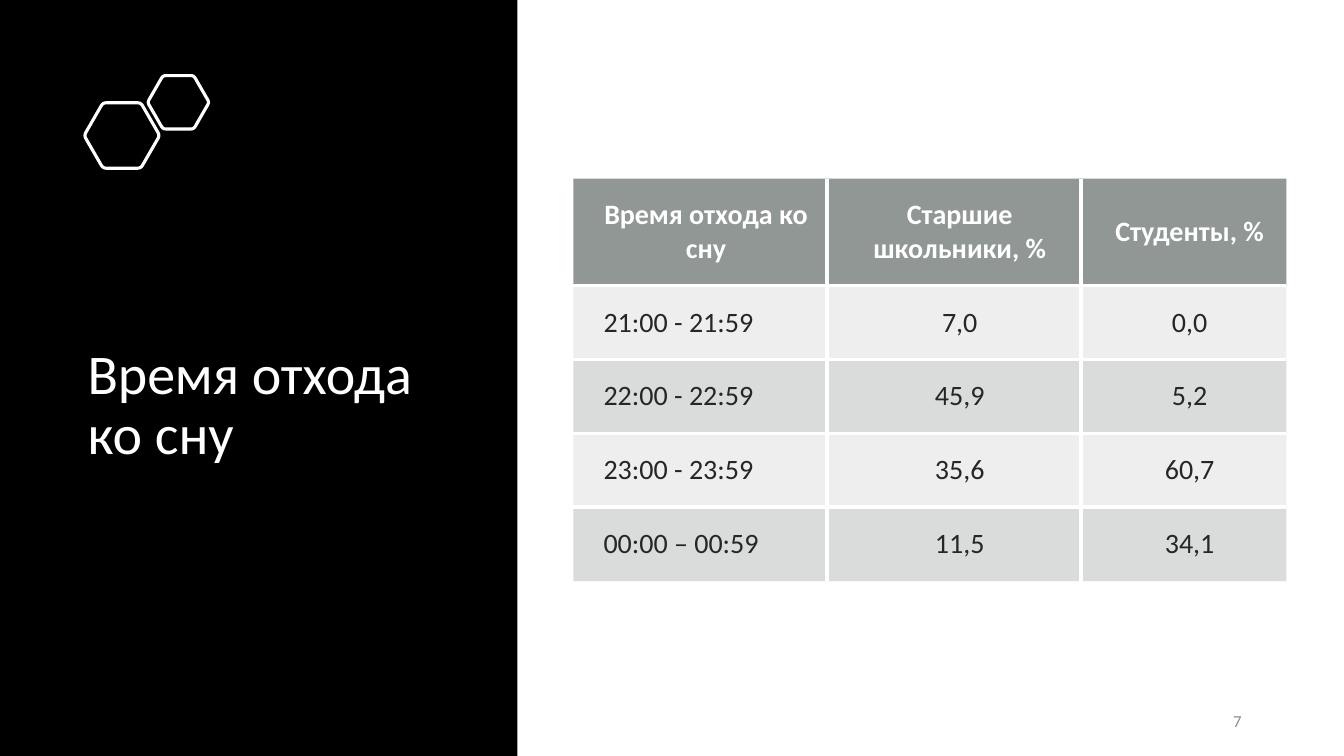
from math import cos, pi, sin

from lxml import etree
from pptx import Presentation
from pptx.dml.color import RGBColor
from pptx.enum.shapes import MSO_SHAPE
from pptx.enum.text import MSO_ANCHOR, PP_ALIGN
from pptx.oxml.ns import qn
from pptx.util import Pt

RECTANGLE = MSO_SHAPE.RECTANGLE
MIDDLE, BOTTOM = MSO_ANCHOR.MIDDLE, MSO_ANCHOR.BOTTOM
LEFT, CENTER, RIGHT = PP_ALIGN.LEFT, PP_ALIGN.CENTER, PP_ALIGN.RIGHT
WHITE, BLACK, DARK_TEXT, PAGE_GRAY = "FFFFFF", "000000", "262626", "8C8C8C"
HEADER_FILL, BODY_FILL = "636B68", "878E8B"


def color(hex_string):
    return RGBColor.from_string(hex_string)


def write_text(text_frame, text, size, hex_string, alignment, bold=False):
    paragraph = text_frame.paragraphs[0]
    paragraph.alignment = alignment
    run = paragraph.add_run()
    run.text = text
    run.font.name = "Calibri"
    run.font.size = Pt(size)
    run.font.bold = bold
    run.font.color.rgb = color(hex_string)
    return paragraph


presentation = Presentation()
presentation.slide_width, presentation.slide_height = Pt(960), Pt(540)
slide = presentation.slides.add_slide(presentation.slide_layouts[6])
shapes = slide.shapes

# Left panel and title
panel = shapes.add_shape(RECTANGLE, 0, 0, Pt(369.5), Pt(540))
panel.shadow.inherit = False
panel.fill.solid()
panel.fill.fore_color.rgb = color(BLACK)
panel.line.fill.background()

title = shapes.add_textbox(Pt(55.5), Pt(127.5), Pt(280), Pt(209.5)).text_frame
title.word_wrap = True
title.vertical_anchor = BOTTOM
write_text(title, "Время отхода ко сну", 40, WHITE, LEFT).line_spacing = 0.9

# Hexagons with rounded corners: center x, center y, radius
for center_x, center_y, radius in [(87.1, 96.8, 27), (127.4, 73.1, 22)]:
    corners = [(center_x + radius * cos(i * pi / 3), center_y + radius * sin(i * pi / 3))
               for i in range(6)]
    outline = []
    for i, corner in enumerate(corners):
        before, after = corners[i - 1], corners[(i + 1) % 6]
        for t in (0, 0.25, 0.5, 0.75, 1):
            to_before, to_after = 0.09 * (1 - t) ** 2, 0.09 * t ** 2
            outline.append(tuple(
                Pt(c + to_before * (b - c) + to_after * (a - c))
                for b, c, a in zip(before, corner, after)))
    builder = shapes.build_freeform(*outline[0])
    builder.add_line_segments(outline[1:], close=True)
    hexagon = builder.convert_to_shape()
    hexagon.shadow.inherit = False
    hexagon.fill.background()
    hexagon.line.color.rgb = color(WHITE)
    hexagon.line.width = Pt(2.25)

# Bedtime table
rows = [
    ("Время отхода ко сну", "Старшие школьники, %", "Студенты, %"),
    ("21:00 - 21:59", "7,0", "0,0"),
    ("22:00 - 22:59", "45,9", "5,2"),
    ("23:00 - 23:59", "35,6", "60,7"),
    ("00:00 – 00:59", "11,5", "34,1"),
]
column_widths = [181, 181.5, 147]
row_heights = [76.5] + [52.8] * 4
table = shapes.add_table(len(rows), len(column_widths), Pt(409.5), Pt(127.5),
                         Pt(sum(column_widths)), Pt(sum(row_heights))).table
for column, width in zip(table.columns, column_widths):
    column.width = Pt(width)
for row, height in zip(table.rows, row_heights):
    row.height = Pt(height)

for r, values in enumerate(rows):
    is_header = r == 0
    opacity = 70 if is_header else 15 if r % 2 else 30
    for c, value in enumerate(values):
        cell = table.cell(r, c)
        cell.vertical_anchor = MIDDLE
        cell.margin_left = Pt(21.6)
        cell.margin_right = cell.margin_top = cell.margin_bottom = Pt(13)
        write_text(cell.text_frame, value, 20, WHITE if is_header else DARK_TEXT,
                   CENTER if is_header or c else LEFT, is_header)

        properties = cell._tc.get_or_add_tcPr()
        inner_sides = {"a:lnL": c > 0, "a:lnR": c < len(values) - 1,
                       "a:lnT": r > 0, "a:lnB": r < len(rows) - 1}
        for tag, is_inner in inner_sides.items():
            border = etree.SubElement(properties, qn(tag), w=str(Pt(3)))
            if is_inner:
                fill = etree.SubElement(border, qn("a:solidFill"))
                etree.SubElement(fill, qn("a:srgbClr"), val=WHITE)
            else:
                etree.SubElement(border, qn("a:noFill"))

        cell.fill.solid()
        cell.fill.fore_color.rgb = color(HEADER_FILL if is_header else BODY_FILL)
        fill_color = properties.find(qn("a:solidFill")).find(qn("a:srgbClr"))
        etree.SubElement(fill_color, qn("a:alpha"), val=str(opacity * 1000))

# Page number
page_number = shapes.add_textbox(Pt(678), Pt(500.5), Pt(216), Pt(28.75)).text_frame
page_number.word_wrap = True
page_number.vertical_anchor = MIDDLE
write_text(page_number, "7", 12, PAGE_GRAY, RIGHT)

presentation.save("out.pptx")
